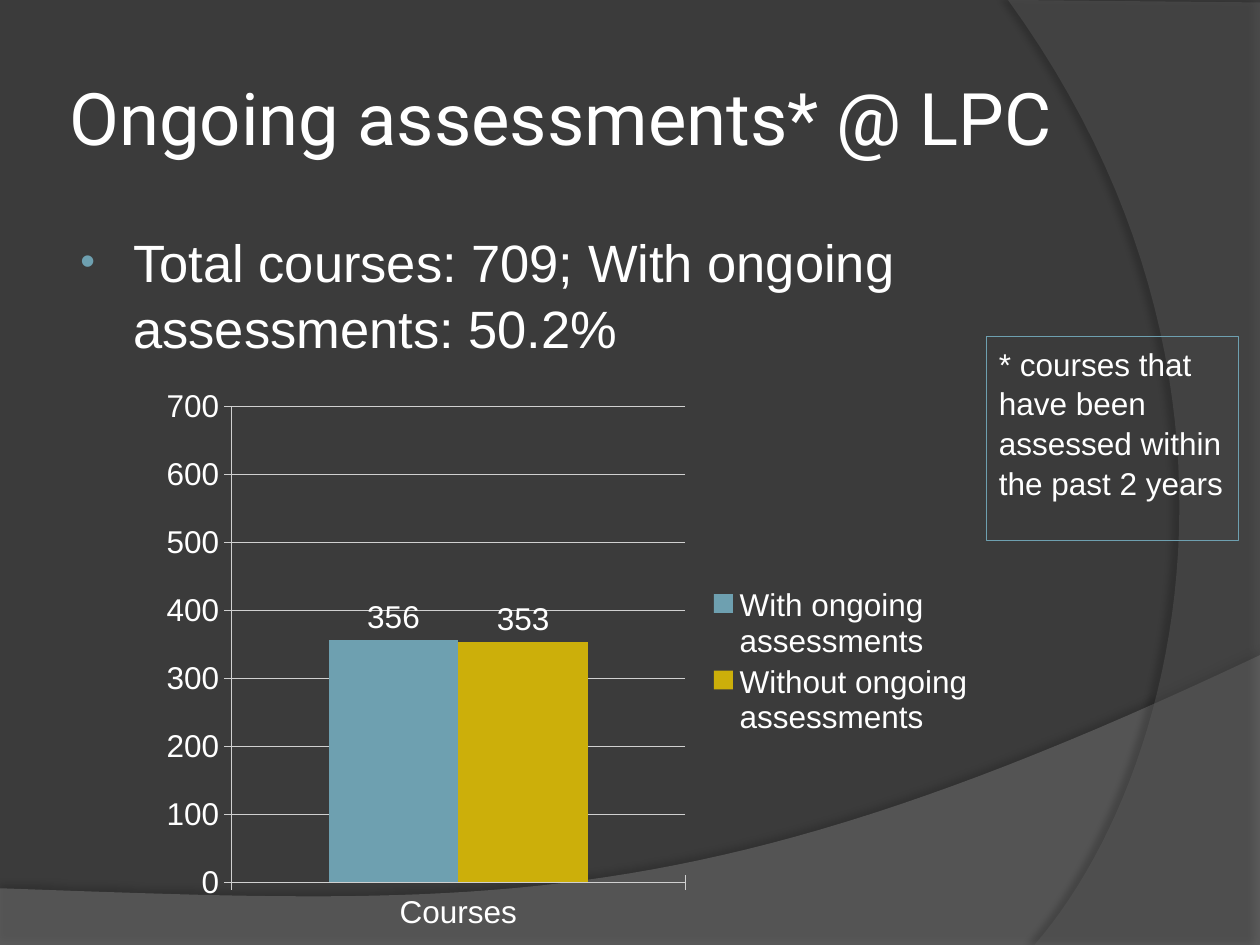
from lxml import etree
from pptx import Presentation
from pptx.chart.data import CategoryChartData
from pptx.dml.color import RGBColor
from pptx.enum.chart import XL_CHART_TYPE, XL_LABEL_POSITION, XL_LEGEND_POSITION, XL_TICK_MARK
from pptx.enum.shapes import MSO_SHAPE
from pptx.enum.text import MSO_ANCHOR, PP_ALIGN
from pptx.oxml import parse_xml
from pptx.oxml.ns import nsdecls, qn
from pptx.util import Inches, Pt

COLUMN = XL_CHART_TYPE.COLUMN_CLUSTERED
OUTSIDE_END = XL_LABEL_POSITION.OUTSIDE_END
RIGHT = XL_LEGEND_POSITION.RIGHT
CROSS = XL_TICK_MARK.CROSS
NO_TICK = XL_TICK_MARK.NONE
RECTANGLE = MSO_SHAPE.RECTANGLE
TOP, MIDDLE = MSO_ANCHOR.TOP, MSO_ANCHOR.MIDDLE
LEFT = PP_ALIGN.LEFT

DARK = RGBColor(0x3B, 0x3B, 0x3B)
HILL_GRAY = RGBColor(0x7F, 0x7F, 0x7F)
ARC_GRAY = RGBColor(0x5E, 0x5E, 0x5E)
GRID_GRAY = RGBColor(0xD0, 0xD0, 0xD0)
WHITE = RGBColor(0xFF, 0xFF, 0xFF)
BLUE = RGBColor(0x6E, 0xA0, 0xB0)
GOLD = RGBColor(0xCC, 0xAF, 0x0A)


def set_attrs(obj, values):
    for name, value in values.items():
        setattr(obj, name, value)


def bezier(p0, p1, p2, p3, steps=48):
    """Points along a cubic curve, without its start."""
    points = []
    for i in range(1, steps + 1):
        t = i / steps
        u = 1 - t
        points.append(tuple(u**3 * a + 3 * u * u * t * b + 3 * u * t * t * c + t**3 * d
                            for a, b, c, d in zip(p0, p1, p2, p3)))
    return points


def add_backdrop(slide, corners, curve, color, opacity, shadow):
    """Translucent area: straight corners, then a curve from the last corner."""
    points = [(Inches(x), Inches(y)) for x, y in corners + bezier(corners[-1], *curve)]
    builder = slide.shapes.build_freeform(*points[0])
    builder.add_line_segments(points[1:], close=True)
    sp = builder.convert_to_shape()
    sp.shadow.inherit = False
    sp.line.fill.background()
    sp.fill.solid()
    sp.fill.fore_color.rgb = color
    sp_pr = sp._element.spPr
    clr = sp_pr.find(qn("a:solidFill"))[0]
    etree.SubElement(clr, qn("a:alpha"), val=str(opacity * 1000))
    shadow_opacity, blur, dist, angle = shadow
    sp_pr.find(qn("a:effectLst")).append(parse_xml(
        f'<a:outerShdw {nsdecls("a")} blurRad="{Pt(blur)}" dist="{Pt(dist)}" '
        f'dir="{angle * 60000}" algn="ctr" rotWithShape="0"><a:srgbClr val="000000">'
        f'<a:alpha val="{shadow_opacity * 1000}"/></a:srgbClr></a:outerShdw>'))


def write_text(sp, text, size, font="Arial", **frame):
    tf = sp.text_frame
    set_attrs(tf, {"word_wrap": True, "vertical_anchor": TOP, **frame})
    p = tf.paragraphs[0]
    p.alignment = LEFT
    r = p.add_run()
    r.text = text
    set_attrs(r.font, {"name": font, "size": Pt(size)})
    r.font.color.rgb = WHITE
    return p


def add_text(slide, box, *args, **frame):
    sp = slide.shapes.add_textbox(*map(Inches, box))
    return write_text(sp, *args, **frame)


def add_bullet(p, color):
    p_pr = p._p.get_or_add_pPr()
    p_pr.set("marL", str(Inches(0.46)))
    p_pr.set("indent", str(Inches(-0.42)))
    for xml in (f'<a:buClr {nsdecls("a")}><a:srgbClr val="{color}"/></a:buClr>',
                f'<a:buSzPct {nsdecls("a")} val="80000"/>',
                f'<a:buFont {nsdecls("a")} typeface="Arial"/>',
                f'<a:buChar {nsdecls("a")} char="•"/>'):
        p_pr.append(parse_xml(xml))


def add_note(slide, box, text):
    sp = slide.shapes.add_shape(RECTANGLE, *map(Inches, box))
    sp.shadow.inherit = False
    sp.fill.background()
    sp.line.color.rgb = BLUE
    sp.line.width = Pt(0.75)
    write_text(sp, text, 18).line_spacing = 1.05


def place(element, index, mode, **fractions):
    """Fix a chart part at fractions of the chart area."""
    old = element.find(qn("c:layout"))
    if old is not None:
        element.remove(old)
    target = '<c:layoutTarget val="inner"/>' if mode == "inner" else ""
    sizes = "".join(f'<c:{k} val="{v}"/>' for k, v in fractions.items())
    element.insert(index, parse_xml(
        f'<c:layout {nsdecls("c")}><c:manualLayout>{target}<c:xMode val="edge"/>'
        f'<c:yMode val="edge"/>{sizes}</c:manualLayout></c:layout>'))


def style_font(font):
    set_attrs(font, {"name": "Arial", "size": Pt(18)})
    font.color.rgb = WHITE


def add_course_chart(slide, box, series):
    data = CategoryChartData()
    data.categories = ["Courses"]
    for name, value, _ in series:
        data.add_series(name, [value])
    chart = slide.shapes.add_chart(COLUMN, *map(Inches, box), data).chart
    chart.has_title = False
    style_font(chart.font)

    plot = chart.plots[0]
    set_attrs(plot, {"gap_width": 150, "overlap": 0, "vary_by_categories": False,
                     "has_data_labels": True})
    set_attrs(plot.data_labels, {"show_value": True, "position": OUTSIDE_END})
    style_font(plot.data_labels.font)
    for bar, (_, _, color) in zip(plot.series, series):
        bar.format.fill.solid()
        bar.format.fill.fore_color.rgb = color

    values = chart.value_axis
    set_attrs(values, {"minimum_scale": 0, "maximum_scale": 700, "major_unit": 100,
                       "has_major_gridlines": True})
    for axis in (chart.category_axis, values):
        set_attrs(axis, {"major_tick_mark": CROSS, "minor_tick_mark": NO_TICK})
    for part in (chart.category_axis, values, values.major_gridlines):
        part.format.line.color.rgb = GRID_GRAY
        part.format.line.width = Pt(0.75)

    chart.has_legend = True
    set_attrs(chart.legend, {"position": RIGHT, "include_in_layout": False})
    style_font(chart.legend.font)
    plot_area = chart._chartSpace.chart.plotArea
    place(plot_area, 0, "inner", x=0.1, y=0.05, w=0.54, h=0.84)
    place(chart.legend._element, 1, "outer", x=0.66, y=0.36, w=0.33, h=0.28)


def main():
    prs = Presentation()
    prs.slide_width, prs.slide_height = Inches(10), Inches(7.5)
    slide = prs.slides.add_slide(prs.slide_layouts[6])
    slide.background.fill.solid()
    slide.background.fill.fore_color.rgb = DARK

    add_backdrop(slide, [(0, 7.05), (0, 7.5), (10, 7.5), (10, 5.2)],
                 [(5.59, 7.29), (3.91, 7.19), (0, 7.05)], HILL_GRAY, 45, (35, 4, 3.5, 270))
    add_backdrop(slide, [(10, 0.02), (10, 7.5), (8.21, 7.5)],
                 [(9.35, 6.19), (10.18, 3), (8, 0)], ARC_GRAY, 40, (45, 4, 4, 180))

    margins = {f"margin_{side}": Inches(0.05) for side in ("left", "right", "top", "bottom")}
    add_text(slide, (0.5, 0.3, 8.17, 1.25), "Ongoing assessments* @ LPC", 41.4, "Roboto",
             vertical_anchor=MIDDLE, **margins)
    p = add_text(slide, (0.5, 1.75, 8.17, 1.17),
                 "Total courses: 709; With ongoing assessments: 50.2%", 30)
    set_attrs(p, {"space_before": Pt(6), "line_spacing": 1.05})
    add_bullet(p, BLUE)

    add_course_chart(slide, (1.17, 3, 6.67, 4.5),
                     [("With ongoing assessments", 356, BLUE),
                      ("Without ongoing assessments", 353, GOLD)])
    add_note(slide, (7.83, 2.67, 2, 1.62),
             "* courses that have been assessed within the past 2 years")
    prs.save("out.pptx")


if __name__ == "__main__":
    main()
